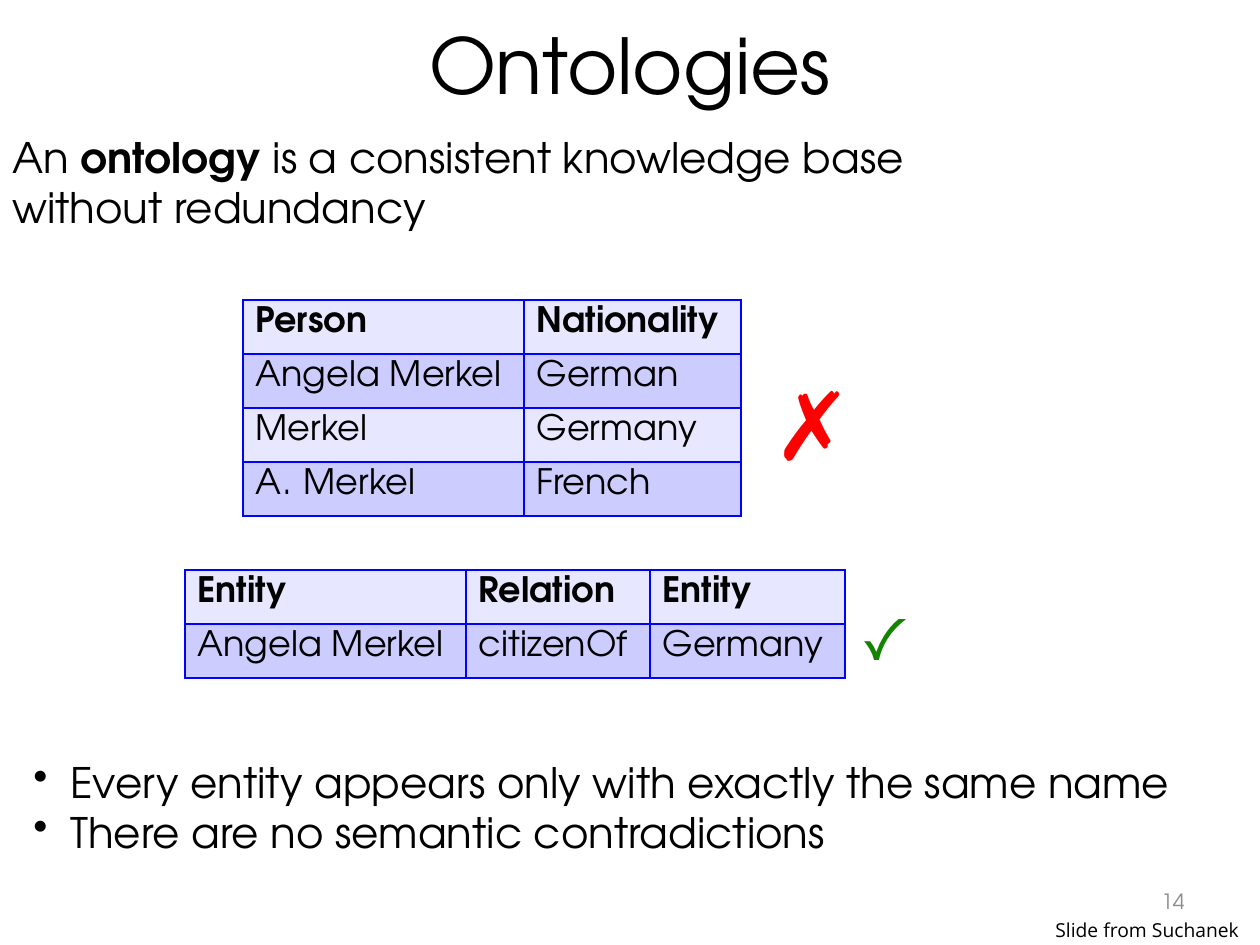
from lxml import etree
from pptx import Presentation
from pptx.dml.color import RGBColor
from pptx.enum.text import MSO_ANCHOR, PP_ALIGN
from pptx.oxml.ns import qn

LEFT, CENTER, RIGHT = PP_ALIGN.LEFT, PP_ALIGN.CENTER, PP_ALIGN.RIGHT
TOP, MIDDLE = MSO_ANCHOR.TOP, MSO_ANCHOR.MIDDLE
PX = 914400 / 126  # EMU per px

THEME = {
    "font": "TeX Gyre Adventor", "credit_font": "Open Sans",
    "text": "000000", "muted": "8C8C8C", "wrong": "FF0000", "right": "128400",
    "border": "0001FF", "bands": ("E7E7FF", "CCCCFF"),
    "title": 44, "body": 24, "cell": 20, "number": 12, "credit": 11,
    "cross": 54, "check": 36,
}
DOT = ("a:buChar", "char", "•", 37)
LETTER = ("a:buAutoNum", "type", "alphaUcPeriod", 48)


def emu(*lengths):
    return [round(n * PX) for n in lengths]


def write(tf, text, size, color=THEME["text"], font=THEME["font"], bold=False,
          align=LEFT, anchor=TOP, wrap=True, bullet=None):
    """Write one paragraph per line; parts between asterisks are bold."""
    tf.word_wrap = wrap
    tf.vertical_anchor = anchor
    for i, line in enumerate(text.split("\n")):
        p = tf.paragraphs[0] if i == 0 else tf.add_paragraph()
        p.alignment = align
        if bullet:
            tag, key, value, indent = bullet
            pPr = p._p.get_or_add_pPr()
            pPr.set("marL", str(round(indent * PX)))
            pPr.set("indent", str(-round(indent * PX)))
            etree.SubElement(pPr, qn(tag)).set(key, value)
        for j, part in enumerate(line.split("*")):
            r = p.add_run()
            r.text = part
            r.font.size = round(size * 12700)
            r.font.name = font
            r.font.bold = bold or j % 2 == 1
            r.font.color.rgb = RGBColor.from_string(color)


prs = Presentation()
prs.slide_width, prs.slide_height = emu(1260, 945)
s = prs.slides.add_slide(prs.slide_layouts[5])

# Title
title = s.shapes.title
title.left, title.top, title.width, title.height = emu(63, 0, 1134, 127)
write(title.text_frame, "Ontologies", THEME["title"], align=CENTER, anchor=MIDDLE)

# Tables: position, column widths, rows
tables = [
    (185, 570, [281, 184, 195],
     [["Entity", "Relation", "Entity"],
      ["Angela Merkel", "citizenOf", "Germany"]]),
    (243, 300, [281, 217],
     [["Person", "Nationality"],
      ["Angela Merkel", "German"],
      ["Merkel", "Germany"],
      ["Merkel", "French"]]),
]
ROW = 54
for x, y, widths, rows in tables:
    frame = s.shapes.add_table(len(rows), len(widths),
                               *emu(x, y, sum(widths), ROW * len(rows)))
    table = frame.table
    table.horz_banding = False
    for column, width in zip(table.columns, widths):
        column.width = emu(width)[0]
    for i, row in enumerate(rows):
        table.rows[i].height = emu(ROW)[0]
        for j, text in enumerate(row):
            cell = table.cell(i, j)
            # The last name in the person table is lettered "A."
            bullet = LETTER if (i, j) == (3, 0) else None
            write(cell.text_frame, text, THEME["cell"], bold=i == 0, bullet=bullet)
            tcPr = cell._tc.get_or_add_tcPr()
            for side in ("a:lnL", "a:lnR", "a:lnT", "a:lnB"):
                ln = etree.SubElement(tcPr, qn(side), w="12700")
                line_fill = etree.SubElement(ln, qn("a:solidFill"))
                etree.SubElement(line_fill, qn("a:srgbClr"), val=THEME["border"])
            cell.fill.solid()
            cell.fill.fore_color.rgb = RGBColor.from_string(THEME["bands"][i % 2])

# Definition, verdict marks, conclusions, slide number and credit
texts = [
    ((0, 125, 1260, 115),
     "An *ontology *is a consistent knowledge base\nwithout redundancy",
     dict(size=THEME["body"])),
    ((847, 591, 149, 89), "✓", dict(size=THEME["check"], color=THEME["right"])),
    ((761, 360, 86, 127), "✗",
     dict(size=THEME["cross"], color=THEME["wrong"], wrap=False)),
    ((21, 750, 1176, 115),
     "Every entity appears only with exactly the same name\n"
     "There are no semantic contradictions",
     dict(size=THEME["body"], bullet=DOT)),
    ((903, 876, 294, 50), "14",
     dict(size=THEME["number"], color=THEME["muted"], align=RIGHT, anchor=MIDDLE)),
    ((1043, 912, 217, 37), "Slide from Suchanek",
     dict(size=THEME["credit"], font=THEME["credit_font"], wrap=False)),
]
for box, text, style in texts:
    sp = s.shapes.add_textbox(*emu(*box))
    write(sp.text_frame, text, **style)

prs.save("out.pptx")
